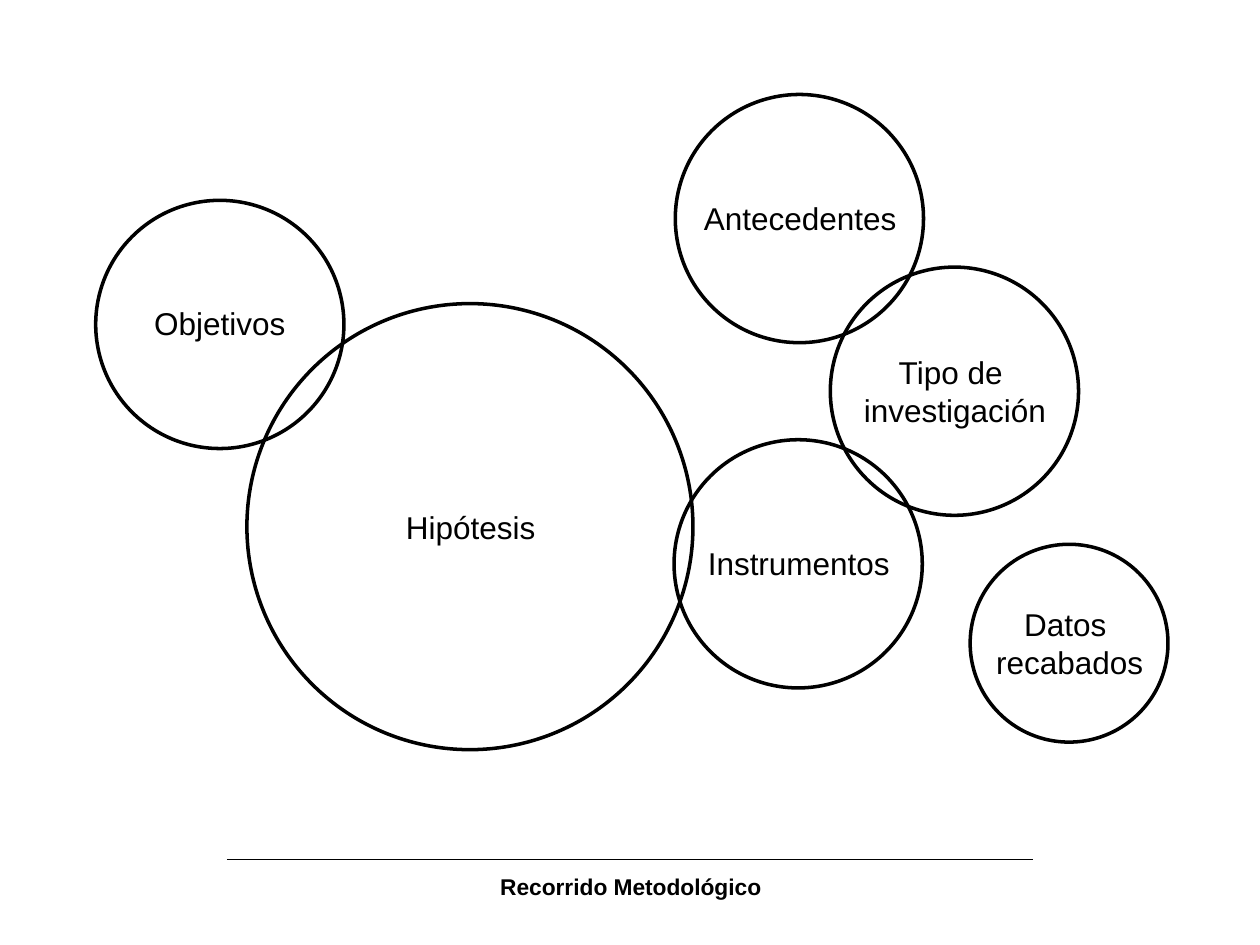
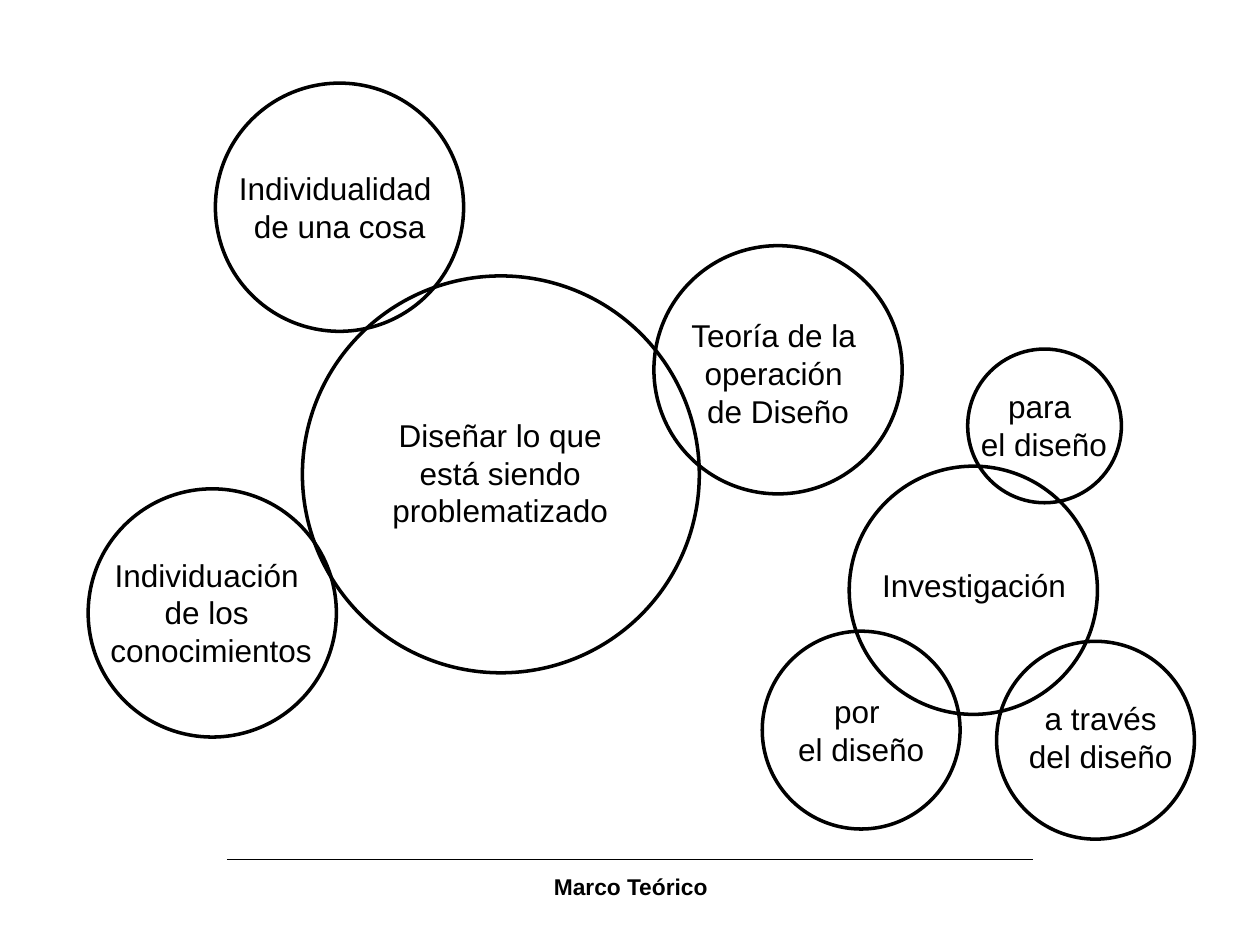
from dataclasses import dataclass

from lxml.etree import SubElement
from pptx import Presentation
from pptx.dml.color import RGBColor
from pptx.enum.shapes import MSO_CONNECTOR, MSO_SHAPE
from pptx.enum.text import MSO_ANCHOR, MSO_AUTO_SIZE, PP_ALIGN
from pptx.oxml.ns import qn
from pptx.util import Inches, Pt

FONT = "Arial"
INK = "000000"
BIG, MID, SMALL, TINY = 3.54, 1.97, 1.57, 1.22
CORE = 3.15


@dataclass
class Bubble:
    text: str
    left: float
    top: float
    size: float
    text_left: float
    text_top: float
    text_width: float


@dataclass
class Page:
    title: str
    bubbles: list[Bubble]


PAGES = [
    Page("Recorrido Metodológico", [
        Bubble("Antecedentes", 5.36, 0.75, MID, 5.49, 1.54, 1.72),
        Bubble("Tipo de \ninvestigación", 6.59, 2.12, MID, 6.76, 2.76, 1.64),
        Bubble("Hipótesis", 1.96, 2.41, BIG, 3.13, 3.99, 1.21),
        Bubble("Objetivos", 0.76, 1.59, MID, 1.13, 2.37, 1.23),
        Bubble("Instrumentos", 5.35, 3.49, MID, 5.52, 4.28, 1.64),
        Bubble("Datos \nrecabados", 7.7, 4.32, SMALL, 7.81, 4.76, 1.36),
    ]),
    Page("Marco Teórico", [
        Bubble("Individualidad \nde una cosa", 1.71, 0.66, MID, 1.8, 1.3, 1.79),
        Bubble("Individuación \nde los \nconocimientos", 0.7, 3.88, MID, 0.78, 4.37, 1.79),
        Bubble("Teoría de la \noperación \nde Diseño", 5.19, 1.95, MID, 5.39, 2.47, 1.57),
        Bubble("Investigación", 6.74, 3.7, MID, 6.74, 4.45, 1.98),
        Bubble("para \nel diseño", 7.68, 2.77, TINY, 7.69, 3.03, 1.19),
        Bubble("a través\ndel diseño", 7.91, 5.09, SMALL, 8.07, 5.51, 1.33),
        Bubble("por \nel diseño", 6.05, 5.01, SMALL, 6.24, 5.45, 1.19),
        Bubble("Diseñar lo que\nestá siendo\nproblematizado", 2.4, 2.19, CORE, 3.02, 3.26, 1.9),
    ]),
]


def color(code: str) -> RGBColor:
    return RGBColor.from_string(code)


def write(shape, text: str, *, size: float = 18, bold: bool = False,
          wrap: bool = False, fit=MSO_AUTO_SIZE.SHAPE_TO_FIT_TEXT) -> None:
    frame = shape.text_frame
    frame.text = text
    frame.word_wrap = wrap
    frame.auto_size = fit
    frame.vertical_anchor = MSO_ANCHOR.TOP
    frame.margin_left = frame.margin_right = Inches(0.09)
    frame.margin_top = frame.margin_bottom = Inches(0.04)
    for line in frame.paragraphs:
        line.alignment = PP_ALIGN.CENTER
        for run in line.runs:
            run.font.name = FONT
            run.font.size = Pt(size)
            run.font.bold = bold
            run.font.color.rgb = color(INK)


def stroke(shape, width: float) -> None:
    shape.line.color.rgb = color(INK)
    shape.line.width = Pt(width)


def draw_footer(slide, title: str) -> None:
    rule = slide.shapes.add_connector(
        MSO_CONNECTOR.STRAIGHT, Inches(1.8), Inches(6.82), Inches(8.2), Inches(6.82))
    stroke(rule, 0.75)
    SubElement(rule.element.spPr, qn("a:effectLst"))
    box = slide.shapes.title
    box.left, box.top = Inches(1.03), Inches(6.89)
    box.width, box.height = Inches(7.95), Inches(0.3)
    write(box, title, size=13, bold=True, wrap=True, fit=MSO_AUTO_SIZE.NONE)


def draw_bubble(slide, item: Bubble) -> None:
    ring = slide.shapes.add_shape(
        MSO_SHAPE.OVAL, Inches(item.left), Inches(item.top),
        Inches(item.size), Inches(item.size))
    ring.shadow.inherit = False
    ring.fill.background()
    stroke(ring, 2)
    lines = item.text.count("\n") + 1
    label = slide.shapes.add_textbox(
        Inches(item.text_left), Inches(item.text_top),
        Inches(item.text_width), Inches(0.08 + 0.305 * lines))
    write(label, item.text)


def main() -> None:
    deck = Presentation()
    deck.slide_width, deck.slide_height = Inches(10), Inches(7.5)
    layout = deck.slide_layouts.get_by_name("Title Only")
    for page in PAGES:
        slide = deck.slides.add_slide(layout)
        draw_footer(slide, page.title)
        for item in page.bubbles:
            draw_bubble(slide, item)
    deck.save("out.pptx")


if __name__ == "__main__":
    main()
